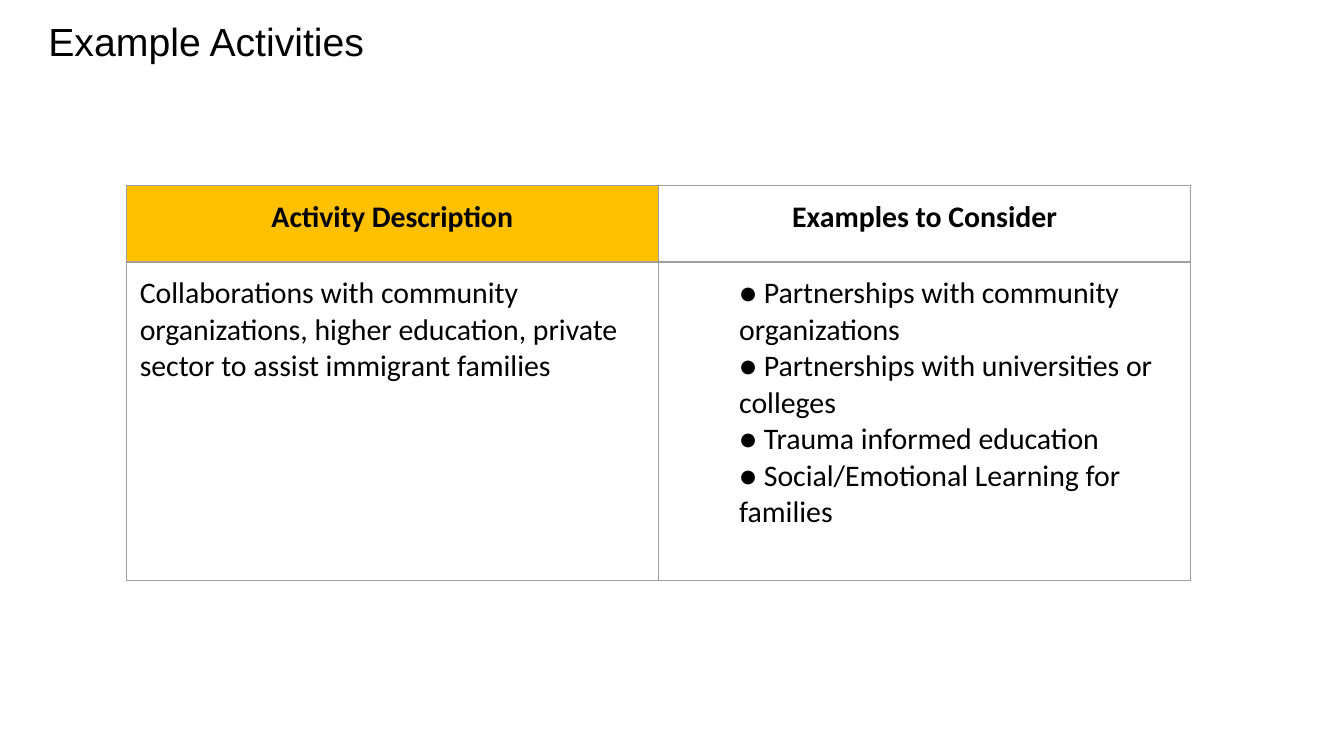
"""Build the Example Activities slide with its two-column table."""

from dataclasses import dataclass
from typing import Optional

import lxml.etree
import pptx
import pptx.dml.color
import pptx.enum.text
import pptx.oxml.ns
import pptx.util

BLACK = pptx.dml.color.RGBColor(0x00, 0x00, 0x00)
AMBER = pptx.dml.color.RGBColor(0xFF, 0xC0, 0x00)
GRAY = pptx.dml.color.RGBColor(0x9E, 0x9E, 0x9E)
SLIDE_WIDTH = pptx.util.Inches(10)
SLIDE_HEIGHT = SLIDE_WIDTH * 9 // 16
COLUMN_WIDTH = pptx.util.Inches(3.96)
ROW_HEIGHTS = (pptx.util.Inches(0.57), pptx.util.Inches(2.37))
CELL_MARGIN = pptx.util.Inches(0.1)
LEFT = pptx.enum.text.PP_ALIGN.LEFT
CENTER = pptx.enum.text.PP_ALIGN.CENTER


@dataclass(frozen=True)
class TableCell:
    """Content and format of one table cell."""

    lines: tuple[str, ...]
    heading: bool = False
    fill: Optional[pptx.dml.color.RGBColor] = None
    indent: float = 0


ROWS = (
    (
        TableCell(("Activity Description",), heading=True, fill=AMBER),
        TableCell(("Examples to Consider",), heading=True),
    ),
    (
        TableCell((
            "Collaborations with community organizations, higher education, "
            "private sector to assist immigrant families",
        )),
        TableCell(
            (
                "● Partnerships with community organizations",
                "● Partnerships with universities or colleges",
                "● Trauma informed education",
                "● Social/Emotional Learning for families",
            ),
            indent=0.5,
        ),
    ),
)


def write_text(text_frame, lines, *, font, size, bold=False, align=LEFT, indent=0, spacing=1.0) -> None:
    """Fill a text frame with one formatted paragraph per line."""
    text_frame.text = "\n".join(lines)
    text_frame.word_wrap = True
    for paragraph in text_frame.paragraphs:
        if indent:
            properties = paragraph._p.get_or_add_pPr()
            properties.set("marL", str(pptx.util.Inches(indent)))
            properties.set("indent", "0")
        paragraph.alignment = align
        paragraph.line_spacing = spacing
        paragraph.font.name = font
        paragraph.font.size = pptx.util.Pt(size)
        paragraph.font.bold = bold
        paragraph.font.color.rgb = BLACK


def draw_borders(cell) -> None:
    """Give a table cell a thin gray line on each side."""
    properties = cell._tc.get_or_add_tcPr()
    for side in ("a:lnL", "a:lnR", "a:lnT", "a:lnB"):
        line = lxml.etree.SubElement(
            properties, pptx.oxml.ns.qn(side), w=str(pptx.util.Pt(0.75))
        )
        fill = lxml.etree.SubElement(line, pptx.oxml.ns.qn("a:solidFill"))
        lxml.etree.SubElement(fill, pptx.oxml.ns.qn("a:srgbClr"), val=str(GRAY))


def draw_cell(cell, content: TableCell) -> None:
    """Write and format one table cell."""
    cell.margin_left = cell.margin_right = CELL_MARGIN
    cell.margin_top = cell.margin_bottom = CELL_MARGIN
    draw_borders(cell)
    if content.fill is None:
        cell.fill.background()
    else:
        cell.fill.solid()
        cell.fill.fore_color.rgb = content.fill
    write_text(
        cell.text_frame,
        content.lines,
        font="Calibri",
        size=16,
        bold=content.heading,
        align=CENTER if content.heading else LEFT,
        indent=content.indent,
    )


def draw_title(slide, text: str) -> None:
    """Place and format the title placeholder."""
    title = slide.shapes.title
    title.left, title.top = pptx.util.Inches(0.36), int(SLIDE_HEIGHT * 0.03)
    title.width, title.height = pptx.util.Inches(6.62), int(SLIDE_HEIGHT * 0.13)
    text_frame = title.text_frame
    text_frame.margin_left = text_frame.margin_right = 0
    text_frame.margin_top = text_frame.margin_bottom = 0
    text_frame.vertical_anchor = pptx.enum.text.MSO_ANCHOR.TOP
    text_frame.auto_size = pptx.enum.text.MSO_AUTO_SIZE.NONE
    write_text(text_frame, (text,), font="Arial", size=21, spacing=0.9)


def draw_table(slide, rows: tuple[tuple[TableCell, ...], ...]) -> None:
    """Draw the activity table."""
    column_count = len(rows[0])
    table = slide.shapes.add_table(
        len(rows),
        column_count,
        pptx.util.Inches(0.94),
        pptx.util.Inches(1.38),
        COLUMN_WIDTH * column_count,
        sum(ROW_HEIGHTS),
    ).table
    table.first_row = table.horz_banding = False
    for column in table.columns:
        column.width = COLUMN_WIDTH
    for row_index, (row, height) in enumerate(zip(rows, ROW_HEIGHTS)):
        table.rows[row_index].height = height
        for column_index, content in enumerate(row):
            draw_cell(table.cell(row_index, column_index), content)


def main() -> None:
    """Build and save the presentation."""
    presentation = pptx.Presentation()
    presentation.slide_width = SLIDE_WIDTH
    presentation.slide_height = SLIDE_HEIGHT
    slide = presentation.slides.add_slide(presentation.slide_layouts[5])
    draw_title(slide, "Example Activities")
    draw_table(slide, ROWS)
    presentation.save("out.pptx")


if __name__ == "__main__":
    main()
